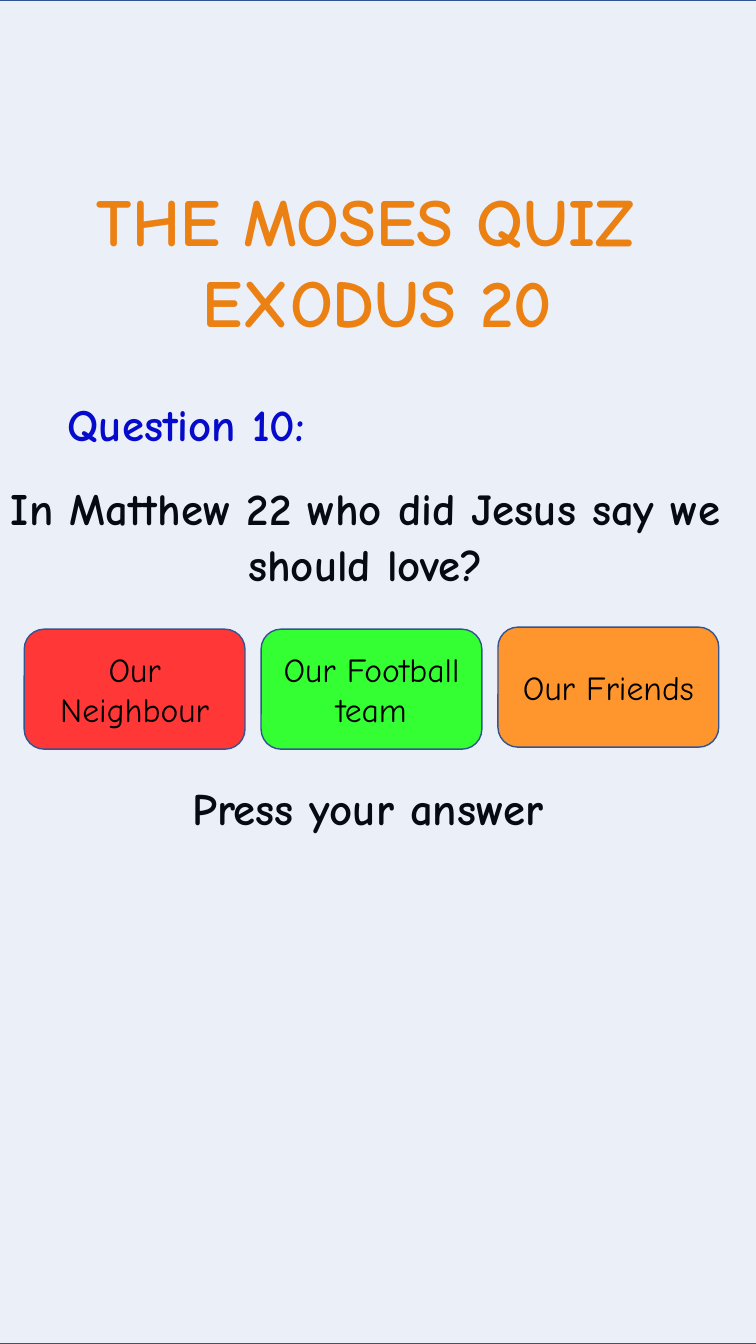
from lxml.etree import SubElement
from pptx import Presentation
from pptx.dml.color import RGBColor
from pptx.enum.shapes import MSO_SHAPE
from pptx.enum.text import MSO_ANCHOR, PP_ALIGN
from pptx.oxml.ns import qn
from pptx.util import Inches, Pt

FONT = "Comic Neue"
BLACK = RGBColor(0x00, 0x00, 0x00)
ORANGE = RGBColor(0xFF, 0x82, 0x00)
BLUE = RGBColor(0x00, 0x00, 0xCC)
WASH = RGBColor(0x44, 0x72, 0xC4)
BORDER = RGBColor(0x32, 0x54, 0x91)
RED = RGBColor(0xFF, 0x37, 0x37)
GREEN = RGBColor(0x33, 0xFF, 0x33)
AMBER = RGBColor(0xFF, 0x96, 0x2D)

SLIDE_WIDTH, SLIDE_HEIGHT = 7.5, 13.33
WASH_LEFT, WASH_WIDTH = -0.66, 8.58
WASH_OPACITY = 10  # percent

# text, (left, top, width, height), size, colour, alignment, wrap, line spacing, space before
TEXTS = [
    ("THE MOSES QUIZ \nEXODUS 20", (0.3, 1.73, 6.89, 1.72), 48, ORANGE,
     PP_ALIGN.CENTER, False, 1.0, 0),
    ("Question 10:", (0.33, 3.89, 3.04, 0.64), 32, BLUE,
     PP_ALIGN.CENTER, False, 1.0, 0),
    ("In Matthew 22 who did Jesus say we should love?", (0, 4.7, 7.26, 1.63), 32, BLACK,
     PP_ALIGN.CENTER, True, Pt(40), 7.5),
    ("Press your answer", (1.81, 7.75, 4.22, 0.72), 32, BLACK,
     PP_ALIGN.LEFT, True, 0.9, 7.5),
]

# text, colour, top
ANSWERS = [
    ("Our Neighbour", RED, 6.24),
    ("Our Football team", GREEN, 6.24),
    ("Our Friends", AMBER, 6.22),
]
ANSWER_LEFT, ANSWER_STEP = 0.24, 2.35
ANSWER_WIDTH, ANSWER_HEIGHT = 2.19, 1.19


def write(frame, text, size, color, align, bold=False, spacing=1.0, before=0):
    frame.text = text
    for paragraph in frame.paragraphs:
        paragraph.alignment = align
        paragraph.line_spacing = spacing
        paragraph.space_before = Pt(before)
        for run in paragraph.runs:
            run.font.name = FONT
            run.font.size = Pt(size)
            run.font.bold = bold
            run.font.color.rgb = color


def add_panel(slide, preset, box, color):
    panel = slide.shapes.add_shape(preset, *map(Inches, box))
    panel.shadow.inherit = False
    panel.fill.solid()
    panel.fill.fore_color.rgb = color
    panel.line.color.rgb = BORDER
    panel.line.width = Pt(1)
    return panel


def add_wash(slide):
    """Cover the slide and its text with a nearly transparent blue sheet."""
    wash = add_panel(slide, MSO_SHAPE.RECTANGLE,
                     (WASH_LEFT, 0, WASH_WIDTH, SLIDE_HEIGHT), WASH)
    tint = wash.fill._xPr.find(qn("a:solidFill"))[0]
    SubElement(tint, qn("a:alpha")).set("val", str(WASH_OPACITY * 1000))


def main():
    deck = Presentation()
    deck.slide_width = Inches(SLIDE_WIDTH)
    deck.slide_height = Inches(SLIDE_HEIGHT)
    slide = deck.slides.add_slide(deck.slide_layouts[6])

    for text, box, size, color, align, wrap, spacing, before in TEXTS:
        frame = slide.shapes.add_textbox(*map(Inches, box)).text_frame
        frame.word_wrap = wrap
        write(frame, text, size, color, align, True, spacing, before)

    add_wash(slide)

    for column, (text, color, top) in enumerate(ANSWERS):
        left = ANSWER_LEFT + column * ANSWER_STEP
        button = add_panel(slide, MSO_SHAPE.ROUNDED_RECTANGLE,
                           (left, top, ANSWER_WIDTH, ANSWER_HEIGHT), color)
        button.text_frame.word_wrap = True
        button.text_frame.vertical_anchor = MSO_ANCHOR.MIDDLE
        write(button.text_frame, text, 24, BLACK, PP_ALIGN.CENTER)

    deck.save("out.pptx")


if __name__ == "__main__":
    main()
